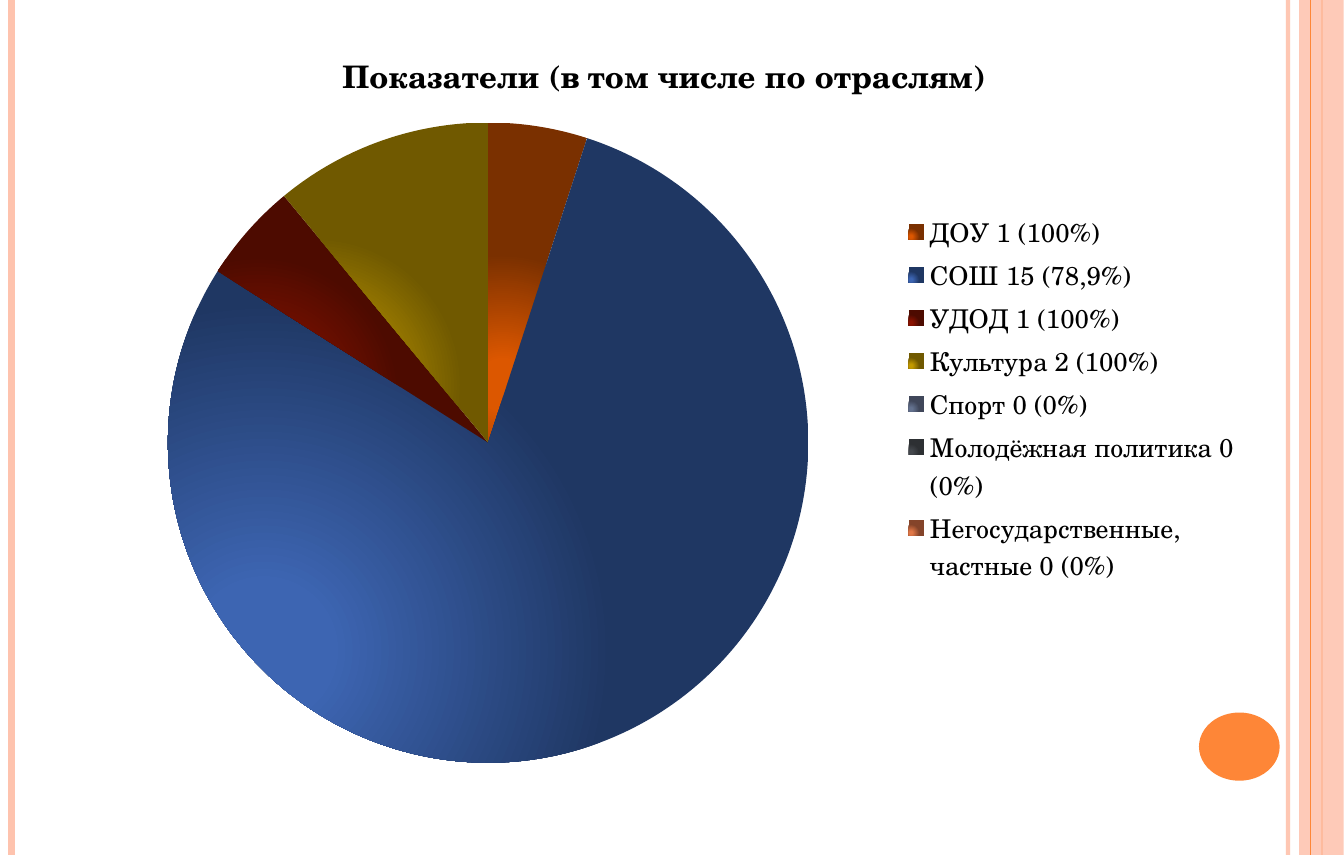
from dataclasses import dataclass

from lxml import etree
from pptx import Presentation
from pptx import util as u
from pptx.chart.data import CategoryChartData
from pptx.dml.color import RGBColor
from pptx.enum import chart as ch, shapes
from pptx.oxml import parse_xml
from pptx.oxml.ns import nsdecls, qn

# 33 by 21 cm
WIDTH, HEIGHT = 33 / 2.54, 21 / 2.54


@dataclass(frozen=True)
class Theme:
    font: str = "TeX Gyre Schola"
    text: str = "000000"
    accent: str = "FE8637"
    pale: str = "FEC3AE"
    legend_size: float = 18
    title_size: float = 21.6
    # (centre, edge) of each slice
    slices: tuple = (
        ("DC5700", "7A3000"), ("3D65B2", "1F3763"), ("8A1200", "4D0B00"),
        ("C29A00", "705900"), ("64728F", "40475A"), ("44484D", "2D3033"),
        ("E07848", "84442A"),
    )


# category: share in percent
SHARES = {
    "ДОУ 1 (100%)": 5,
    "СОШ 15 (78,9%)": 79,
    "УДОД 1 (100%)": 5,
    "Культура 2 (100%)": 11,
    "Спорт 0 (0%)": 0,
    "Молодёжная политика 0 (0%)": 0,
    "Негосударственные, частные 0 (0%)": 0,
}


class SlideBuilder:
    def __init__(self, s, theme):
        self.s, self.theme = s, theme

    def set_alpha(self, fill, percent):
        if percent < 100:
            color = fill._xPr.find(".//" + qn("a:srgbClr"))
            etree.SubElement(color, qn("a:alpha"), val=str(percent * 1000))

    def rule(self, x, color, width, alpha=100):
        """Draw a vertical line over the full slide height."""
        sp = self.s.shapes.add_connector(
            shapes.MSO_CONNECTOR.STRAIGHT,
            u.Inches(x), 0, u.Inches(x), u.Inches(HEIGHT))
        sp.line.width = u.Pt(width)
        sp.line.color.rgb = RGBColor.from_string(color)
        self.set_alpha(sp.line.fill, alpha)
        etree.SubElement(sp._element.spPr, qn("a:effectLst"))

    def shape(self, kind, box, color, alpha=100):
        sp = self.s.shapes.add_shape(kind, *map(u.Inches, box))
        sp.shadow.inherit = False
        sp.fill.solid()
        sp.fill.fore_color.rgb = RGBColor.from_string(color)
        self.set_alpha(sp.fill, alpha)
        sp.line.fill.background()

    def style_font(self, font, size, bold=False):
        formats = {"name": self.theme.font, "size": u.Pt(size), "bold": bold}
        for name, value in formats.items():
            setattr(font, name, value)
        font.color.rgb = RGBColor.from_string(self.theme.text)

    def glow(self, point, centre, edge):
        """Fill a slice with a radial gradient, brightest at lower left."""
        point.format.line.fill.background()
        stops = "".join(
            f'<a:gs pos="{pos}"><a:srgbClr val="{color}"/></a:gs>'
            for pos, color in ((0, centre), (15000, centre),
                               (78000, edge), (100000, edge)))
        point.format.fill._xPr.insert(0, parse_xml(
            f'<a:gradFill {nsdecls("a")} rotWithShape="1">'
            f'<a:gsLst>{stops}</a:gsLst><a:path path="circle">'
            '<a:fillToRect l="15000" t="82000" r="85000" b="18000"/>'
            '</a:path></a:gradFill>'))

    def place(self, element, after, target=None, **fractions):
        """Lay out a chart part by fractions of the chart area."""
        for old in element.findall(qn("c:layout")):
            element.remove(old)
        inner = f'<c:layoutTarget val="{target}"/>' if target else ""
        inner += "".join(f'<c:{k}Mode val="edge"/>' for k in "xy")
        inner += "".join(f'<c:{k} val="{v}"/>' for k, v in fractions.items())
        layout = parse_xml(f'<c:layout {nsdecls("c")}><c:manualLayout>'
                           f'{inner}</c:manualLayout></c:layout>')
        previous = element.find(qn(after)) if after else None
        if previous is None:
            element.insert(0, layout)
        else:
            previous.addnext(layout)

    def pie(self, box, title, shares):
        data = CategoryChartData()
        data.categories = list(shares)
        data.add_series("Series 1", list(shares.values()))
        chart = self.s.shapes.add_chart(
            ch.XL_CHART_TYPE.PIE, *map(u.Inches, box), data).chart
        self.style_font(chart.font, self.theme.legend_size)

        chart.has_title = True
        tf = chart.chart_title.text_frame
        tf.text = title
        self.style_font(tf.paragraphs[0].runs[0].font,
                        self.theme.title_size, bold=True)
        chart.chart_title.include_in_layout = False

        chart.has_legend = True
        legend = chart.legend
        legend.position = ch.XL_LEGEND_POSITION.RIGHT
        legend.include_in_layout = False
        self.style_font(legend.font, self.theme.legend_size)

        plot = chart.plots[0]
        plot.vary_by_categories = True
        for i, colors in enumerate(self.theme.slices):
            self.glow(plot.series[0].points[i], *colors)

        self.place(chart.chart_title._element, "c:tx", x=0.221, y=0.029)
        self.place(legend._element, "c:legendPos",
                   x=0.702, y=0.247, w=0.29, h=0.505)
        self.place(plot._element.getparent(), None, "inner",
                   x=0.077, y=0.134, w=0.546, h=0.847)


def main():
    prs = Presentation()
    prs.slide_width, prs.slide_height = u.Inches(WIDTH), u.Inches(HEIGHT)
    theme = Theme()
    slide = SlideBuilder(prs.slides.add_slide(prs.slide_layouts[6]), theme)

    slide.rule(12.45, theme.pale, 3, alpha=93)
    slide.rule(0.11, theme.pale, 4.5)
    slide.rule(12.78, theme.accent, 1.5)
    slide.shape(shapes.MSO_SHAPE.RECTANGLE, (12.56, 0, 0.43, HEIGHT),
                theme.pale, alpha=87)
    slide.rule(12.67, theme.accent, 0.75)
    slide.shape(shapes.MSO_SHAPE.OVAL, (11.59, 6.89, 0.78, 0.66), theme.accent)
    slide.pie((0.75, 0.2, 11.34, 7.32),
              "Показатели (в том числе по отраслям)", SHARES)
    prs.save("out.pptx")


if __name__ == "__main__":
    main()
